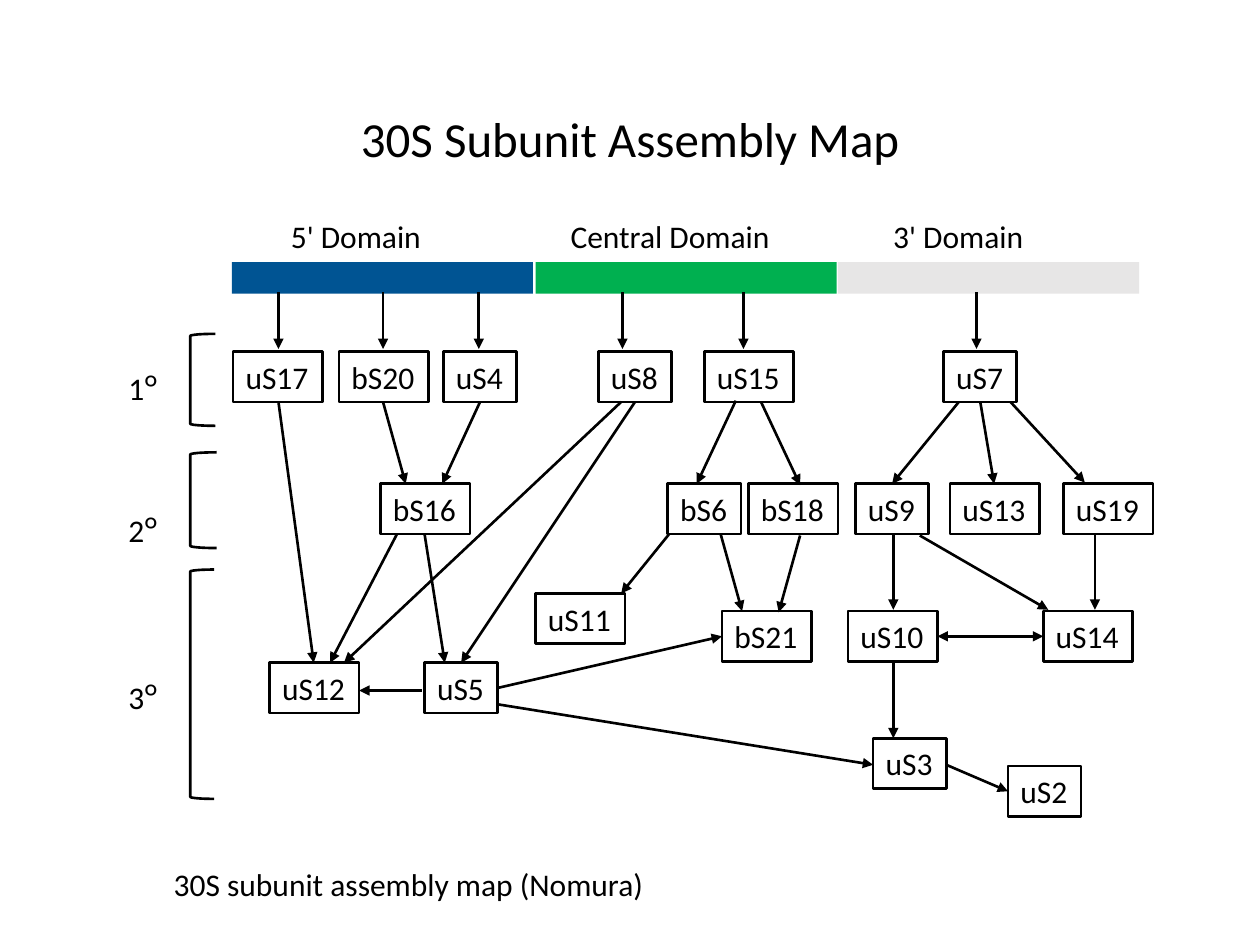
from typing import NamedTuple

from lxml import etree
from pptx import Presentation
from pptx.dml.color import RGBColor
from pptx.enum.shapes import MSO_CONNECTOR, MSO_SHAPE
from pptx.enum.text import MSO_ANCHOR, MSO_AUTO_SIZE, PP_ALIGN
from pptx.oxml.ns import qn
from pptx.util import Inches, Pt

RECTANGLE = MSO_SHAPE.RECTANGLE
LEFT_BRACKET = MSO_SHAPE.LEFT_BRACKET
STRAIGHT = MSO_CONNECTOR.STRAIGHT
MIDDLE = MSO_ANCHOR.MIDDLE
TOP = MSO_ANCHOR.TOP
FIT_SHAPE = MSO_AUTO_SIZE.SHAPE_TO_FIT_TEXT
CENTER = PP_ALIGN.CENTER
LEFT = PP_ALIGN.LEFT

COLORS = {
    "ink": "000000",
    "five_prime": "005493",
    "central": "00B050",
    "three_prime": "E7E6E6",
}
FONT = "Calibri"
BODY_SIZE = 18
LINE_WIDTH = 1.5
LABEL_HEIGHT = 0.4
DOMAIN_TOP = 2.08
DOMAIN_WIDTH = 2.39
DOMAIN_HEIGHT = 0.25
PRIMARY_TOP = 2.79
SECONDARY_TOP = 3.84
TERTIARY_TOP = 4.85
LATE_TOP = 5.26


class Domain(NamedTuple):
    name: str
    color: str
    left: float
    label_left: float
    label_width: float


class Protein(NamedTuple):
    name: str
    left: float
    top: float


class Arrow(NamedTuple):
    start: tuple[float, float]
    end: tuple[float, float]
    two_way: bool = False


class Stage(NamedTuple):
    label: str
    label_top: float
    bracket_top: float
    bracket_width: float
    bracket_height: float


DOMAINS = [
    Domain("5' Domain", "five_prime", 1.84, 2.21, 1.25),
    Domain("Central Domain", "central", 4.25, 4.43, 1.8),
    Domain("3' Domain", "three_prime", 6.65, 6.99, 1.25),
]

PROTEINS = [
    Protein("uS17", 1.85, PRIMARY_TOP),
    Protein("bS20", 2.69, PRIMARY_TOP),
    Protein("uS4", 3.52, PRIMARY_TOP),
    Protein("uS8", 4.75, PRIMARY_TOP),
    Protein("uS15", 5.59, PRIMARY_TOP),
    Protein("uS7", 7.49, PRIMARY_TOP),
    Protein("bS16", 3.02, SECONDARY_TOP),
    Protein("bS6", 5.3, SECONDARY_TOP),
    Protein("bS18", 5.94, SECONDARY_TOP),
    Protein("uS9", 6.79, SECONDARY_TOP),
    Protein("uS13", 7.54, SECONDARY_TOP),
    Protein("uS19", 8.44, SECONDARY_TOP),
    Protein("uS11", 4.25, 4.71),
    Protein("bS21", 5.73, TERTIARY_TOP),
    Protein("uS10", 6.73, TERTIARY_TOP),
    Protein("uS14", 8.28, TERTIARY_TOP),
    Protein("uS12", 2.14, LATE_TOP),
    Protein("uS5", 3.37, LATE_TOP),
    Protein("uS3", 6.93, 5.86),
    Protein("uS2", 8, 6.08),
]

BINDING_ARROWS = [Arrow((x, 2.32), (x, 2.77)) for x in (2.21, 3.04, 3.8, 4.94, 5.9, 7.75)]
ASSEMBLY_ARROWS = [
    Arrow((3.04, 3.19), (3.22, 3.84)),
    Arrow((3.81, 3.19), (3.51, 3.84)),
    Arrow((3.37, 4.24), (3.53, 5.26)),
    Arrow((3.15, 4.24), (2.62, 5.26)),
    Arrow((2.21, 3.19), (2.49, 5.26)),
    Arrow((4.93, 3.19), (2.73, 5.26)),
    Arrow((5.04, 3.19), (3.66, 5.26)),
    Arrow((5.84, 3.18), (5.53, 3.84)),
    Arrow((6.04, 3.19), (6.35, 3.85)),
    Arrow((5.31, 4.24), (4.93, 4.71)),
    Arrow((5.72, 4.24), (5.89, 4.85)),
    Arrow((6.35, 4.25), (6.18, 4.86)),
    Arrow((3.35, 5.48), (2.85, 5.48)),
    Arrow((3.95, 5.46), (5.73, 5.05)),
    Arrow((3.95, 5.59), (6.93, 6.07)),
    Arrow((7.61, 3.19), (7.08, 3.84)),
    Arrow((7.78, 3.19), (7.89, 3.84)),
    Arrow((8.02, 3.19), (8.61, 3.83)),
    Arrow((7.09, 4.24), (7.09, 4.84)),
    Arrow((7.3, 4.25), (8.32, 4.84)),
    Arrow((8.69, 4.24), (8.69, 4.84)),
    Arrow((7.44, 5.05), (8.28, 5.05), two_way=True),
    Arrow((7.09, 5.26), (7.09, 5.86)),
    Arrow((7.51, 6.07), (8, 6.28)),
]

STAGES = [
    Stage("1ᴼ", 2.88, 2.65, 0.2, 0.73),
    Stage("2ᴼ", 4.01, 3.59, 0.21, 0.76),
    Stage("3ᴼ", 5.33, 4.52, 0.19, 1.82),
]


def color(name: str) -> RGBColor:
    return RGBColor.from_string(COLORS[name])


def write_text(shape, text: str, size: int = BODY_SIZE, alignment=LEFT):
    frame = shape.text_frame
    frame.word_wrap = False
    frame.auto_size = FIT_SHAPE
    frame.vertical_anchor = TOP
    paragraph = frame.paragraphs[0]
    paragraph.alignment = alignment
    run = paragraph.add_run()
    run.text = text
    run.font.name = FONT
    run.font.size = Pt(size)
    run.font.color.rgb = color("ink")
    return frame


def add_label(slide, text: str, left: float, top: float, width: float) -> None:
    box = slide.shapes.add_textbox(Inches(left), Inches(top), Inches(width), Inches(LABEL_HEIGHT))
    write_text(box, text)


def add_title(slide, text: str) -> None:
    box = slide.shapes.add_textbox(Inches(0.69), Inches(0.4), Inches(8.62), Inches(1.45))
    frame = write_text(box, text, 28, CENTER)
    frame.word_wrap = True
    frame.auto_size = MSO_AUTO_SIZE.NONE
    frame.vertical_anchor = MIDDLE
    frame.paragraphs[0].line_spacing = 0.9


def add_outline(slide, kind, left: float, top: float, width: float, height: float):
    shape = slide.shapes.add_shape(kind, Inches(left), Inches(top), Inches(width), Inches(height))
    shape.shadow.inherit = False
    shape.fill.background()
    shape.line.color.rgb = color("ink")
    shape.line.width = Pt(LINE_WIDTH)
    return shape


def add_domain(slide, domain: Domain) -> None:
    bar = add_outline(slide, RECTANGLE, domain.left, DOMAIN_TOP, DOMAIN_WIDTH, DOMAIN_HEIGHT)
    bar.fill.solid()
    bar.fill.fore_color.rgb = color(domain.color)
    bar.line.fill.background()
    add_label(slide, domain.name, domain.label_left, 1.67, domain.label_width)


def add_protein(slide, protein: Protein) -> None:
    width = 0.71 if len(protein.name) == 4 else 0.58
    box = add_outline(slide, RECTANGLE, protein.left, protein.top, width, LABEL_HEIGHT)
    write_text(box, protein.name)


def add_arrow(slide, arrow: Arrow) -> None:
    points = [Inches(value) for value in (*arrow.start, *arrow.end)]
    connector = slide.shapes.add_connector(STRAIGHT, *points)
    connector.line.color.rgb = color("ink")
    connector.line.width = Pt(LINE_WIDTH)
    line = connector.line._get_or_add_ln()
    for end in ("a:headEnd", "a:tailEnd") if arrow.two_way else ("a:tailEnd",):
        etree.SubElement(line, qn(end), type="triangle")
    etree.SubElement(connector._element.spPr, qn("a:effectLst"))


def add_stage(slide, stage: Stage) -> None:
    add_label(slide, stage.label, 0.92, stage.label_top, 0.44)
    add_outline(slide, LEFT_BRACKET, 1.51, stage.bracket_top, stage.bracket_width, stage.bracket_height)


def main() -> None:
    presentation = Presentation()
    presentation.slide_width = Inches(10)
    presentation.slide_height = Inches(7.5)
    slide = presentation.slides.add_slide(presentation.slide_layouts[6])
    add_title(slide, "30S Subunit Assembly Map")
    for domain in DOMAINS:
        add_domain(slide, domain)
    for protein in PROTEINS:
        add_protein(slide, protein)
    for arrow in BINDING_ARROWS + ASSEMBLY_ARROWS:
        add_arrow(slide, arrow)
    for stage in STAGES:
        add_stage(slide, stage)
    add_label(slide, "30S subunit assembly map (Nomura)", 1.28, 6.82, 3.99)
    presentation.save("out.pptx")


if __name__ == "__main__":
    main()
